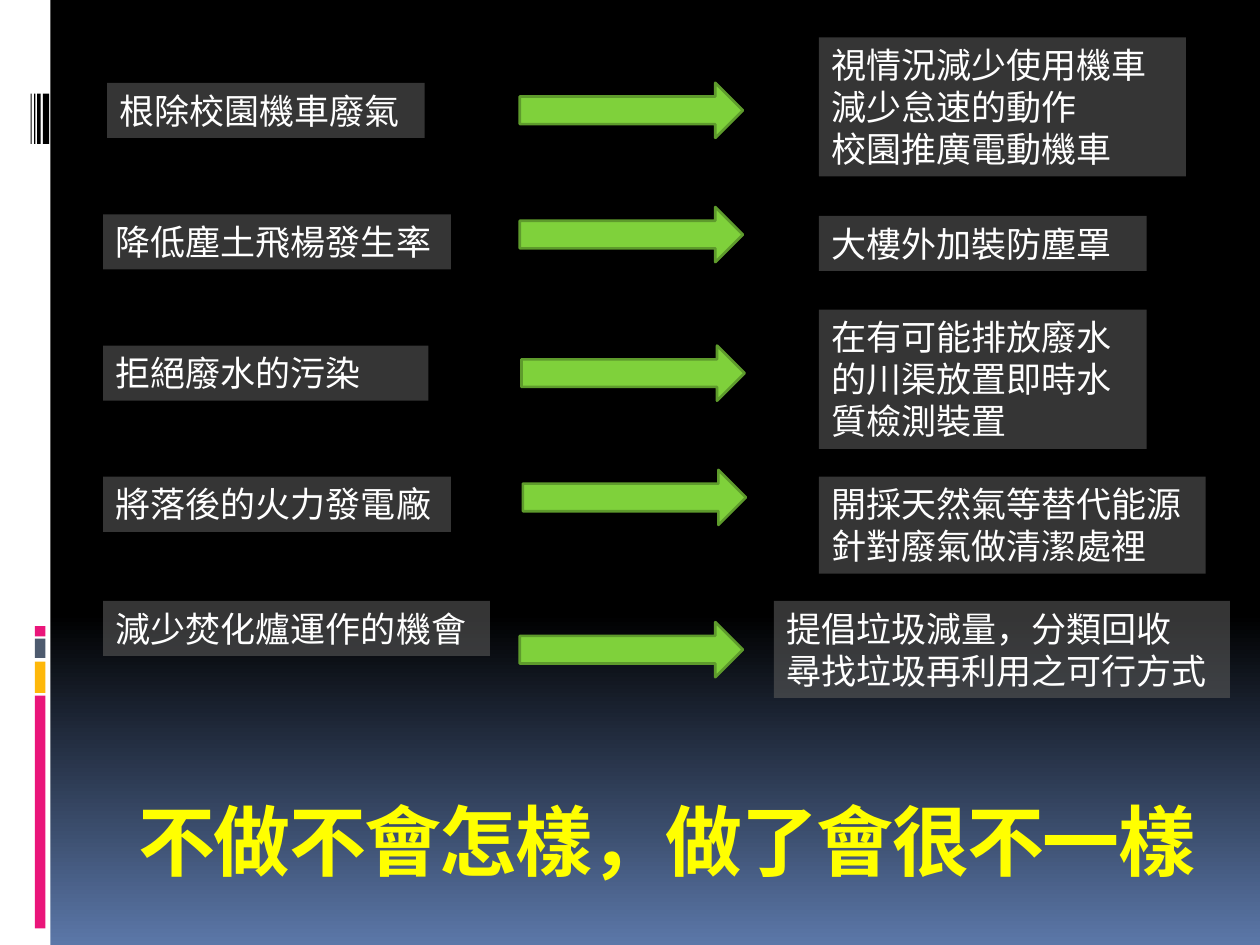
from typing import NamedTuple

from lxml import etree
from pptx import Presentation
from pptx.dml.color import RGBColor
from pptx.enum import shapes, text
from pptx.oxml import ns
from pptx.util import Pt

WHITE = RGBColor(0xFF, 0xFF, 0xFF)
BLACK = RGBColor(0x00, 0x00, 0x00)
SKY_BLUE = RGBColor(0x5B, 0x77, 0xA8)
PINK = RGBColor(0xEA, 0x15, 0x7A)
AMBER = RGBColor(0xFE, 0xB8, 0x0A)
SLATE = RGBColor(0x4E, 0x5B, 0x6F)
PANEL_GREY = RGBColor(0x59, 0x59, 0x59)
ARROW_GREEN = RGBColor(0x7F, 0xD1, 0x3B)
ARROW_EDGE = RGBColor(0x5E, 0x9B, 0x2C)
YELLOW = RGBColor(0xFF, 0xFF, 0x00)
CJK_FONT = "Noto Sans CJK SC"
LATIN_FONT = "Calibri"
LINE_HEIGHT = 24
PANEL_PADDING = 7.5


class Bar(NamedTuple):
    left: float
    top: float
    width: float
    height: float
    color: RGBColor


class Panel(NamedTuple):
    left: float
    top: float
    width: float
    wording: str
    lines: int = 1
    font: str = CJK_FONT


class Measure(NamedTuple):
    goal: Panel
    arrow_left: float
    arrow_top: float
    action: Panel


SIDEBAR = [
    Bar(0, 0, 28.8, 540, WHITE),
    # Coloured blocks
    Bar(20, 397.5, 6, 133, PINK),
    Bar(20, 378, 6, 18, AMBER),
    Bar(20, 365, 6, 11, SLATE),
    Bar(20, 357.8, 6, 5.8, PINK),
    # Barcode strokes
    Bar(24.5, 53.5, 3.6, 28.8, BLACK),
    Bar(21.2, 53.5, 2, 28.8, BLACK),
    Bar(19.5, 53.5, 0.7, 28.8, BLACK),
    Bar(17.5, 53.5, 0.6, 28.8, BLACK),
]

MEASURES = [
    Measure(Panel(61.2, 47.3, 181.5, "根除校園機車廢氣"), 297, 47.3,
            Panel(468, 21.3, 209.7, "視情況減少使用機車\n減少怠速的動作\n校園推廣電動機車",
                  3, LATIN_FONT)),
    Measure(Panel(59, 122.5, 198.7, "降低塵土飛楊發生率"), 297, 118.3,
            Panel(468, 123.3, 187.2, "大樓外加裝防塵罩")),
    Measure(Panel(59, 197.5, 185.8, "拒絕廢水的污染"), 298, 197.5,
            Panel(468, 177, 187.2, "在有可能排放廢水的川渠放置即時水質檢測裝置", 3)),
    Measure(Panel(59, 272.4, 198.7, "將落後的火力發電廠"), 298.8, 268.5,
            Panel(468, 272.4, 221, "開採天然氣等替代能源\n針對廢氣做清潔處裡", 2)),
    Measure(Panel(59, 343.4, 221, "減少焚化爐運作的機會"), 297, 355.5,
            Panel(442.2, 343.4, 260.6, "提倡垃圾減量，分類回收\n尋找垃圾再利用之可行方式", 2)),
]


def add_block(slide, kind, left: float, top: float, width: float,
              height: float, color: RGBColor):
    block = slide.shapes.add_shape(kind, Pt(left), Pt(top), Pt(width), Pt(height))
    block.shadow.inherit = False
    block.fill.solid()
    block.fill.fore_color.rgb = color
    block.line.fill.background()
    return block


def format_runs(paragraph, size: float, color: RGBColor, font: str) -> None:
    paragraph.alignment = text.PP_ALIGN.LEFT
    for run in paragraph.runs:
        run.font.size = Pt(size)
        run.font.color.rgb = color
        run.font.name = font
        east_asian = etree.SubElement(run.font._element, ns.qn("a:ea"))
        east_asian.set("typeface", CJK_FONT)


def add_panel(slide, panel: Panel) -> None:
    height = panel.lines * LINE_HEIGHT + PANEL_PADDING
    block = add_block(slide, shapes.MSO_SHAPE.RECTANGLE, panel.left, panel.top,
                      panel.width, height, PANEL_GREY)
    # 60 % opacity
    color = block.fill._xPr.find(".//" + ns.qn("a:srgbClr"))
    etree.SubElement(color, ns.qn("a:alpha")).set("val", "60000")
    frame = block.text_frame
    frame.word_wrap = True
    frame.vertical_anchor = text.MSO_ANCHOR.TOP
    frame.auto_size = text.MSO_AUTO_SIZE.SHAPE_TO_FIT_TEXT
    wording = frame.paragraphs[0]
    wording.text = panel.wording
    wording.line_spacing = Pt(LINE_HEIGHT)
    format_runs(wording, 20, WHITE, panel.font)


def add_arrow(slide, left: float, top: float) -> None:
    arrow = add_block(slide, shapes.MSO_SHAPE.RIGHT_ARROW, left, top,
                      127.5, 31.5, ARROW_GREEN)
    arrow.line.color.rgb = ARROW_EDGE
    arrow.line.width = Pt(1.5)


def set_background(slide) -> None:
    fill = slide.background.fill
    fill.gradient()
    fill.gradient_angle = 270
    for stop, position, color in zip(fill.gradient_stops, (0.65, 1), (BLACK, SKY_BLUE)):
        stop.position = position
        stop.color.rgb = color


def set_title(slide) -> None:
    title = slide.shapes.title
    title.left, title.top, title.width, title.height = Pt(72), Pt(434), Pt(648), Pt(91.5)
    title.text_frame.text = "不做不會怎樣，做了會很不一樣"
    title.text_frame.vertical_anchor = text.MSO_ANCHOR.MIDDLE
    slogan = title.text_frame.paragraphs[0]
    format_runs(slogan, 44, YELLOW, CJK_FONT)
    for run in slogan.runs:
        run.font.bold = True
        run.font._element.set("spc", "-100")


def main() -> None:
    deck = Presentation()
    deck.slide_width, deck.slide_height = Pt(720), Pt(540)
    slide = deck.slides.add_slide(deck.slide_layouts[5])
    set_background(slide)

    # Decorative sidebar
    for bar in SIDEBAR:
        add_block(slide, shapes.MSO_SHAPE.RECTANGLE, *bar)

    set_title(slide)

    # Goals, each with an arrow to its actions
    for measure in MEASURES:
        add_panel(slide, measure.goal)
        add_panel(slide, measure.action)
        add_arrow(slide, measure.arrow_left, measure.arrow_top)

    deck.save("out.pptx")


if __name__ == "__main__":
    main()
